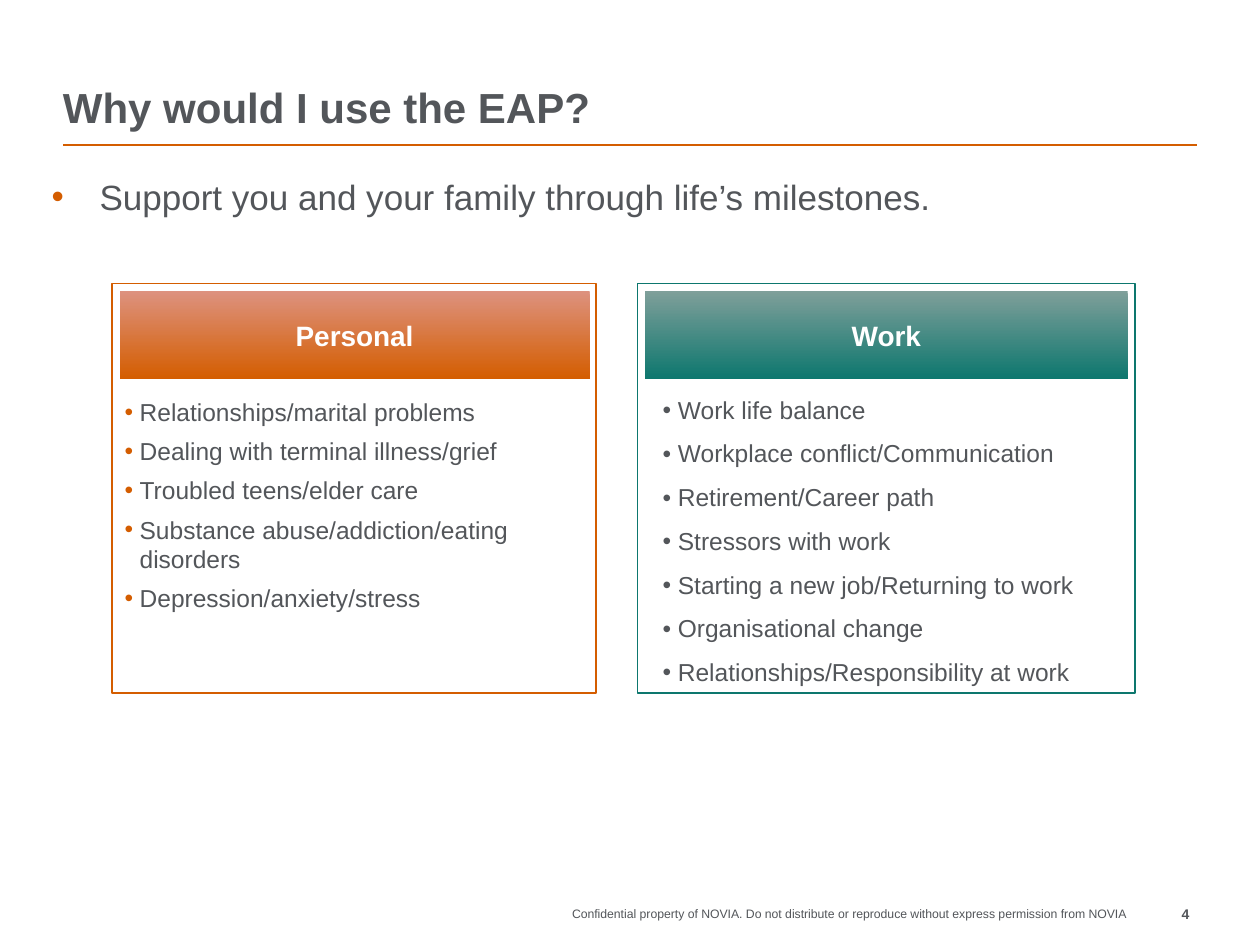
from lxml.etree import SubElement
from pptx import Presentation
from pptx.dml.color import RGBColor
from pptx.enum.shapes import MSO_CONNECTOR, MSO_SHAPE
from pptx.enum.text import MSO_ANCHOR, PP_ALIGN
from pptx.oxml.ns import qn
from pptx.util import Inches, Pt

FONT = "Arial"
GRAY, ORANGE, TEAL, WHITE = "53565A", "D45D00", "0D776E", "FFFFFF"
PANEL_TOP, PANEL_HEIGHT = 2.25, 3.25
HEADER_GAP, HEADER_HEIGHT = 0.06, 0.7

PERSONAL_ITEMS = [
    "Relationships/marital problems",
    "Dealing with terminal illness/grief",
    "Troubled teens/elder care",
    "Substance abuse/addiction/eating disorders",
    "Depression/anxiety/stress",
]
WORK_ITEMS = [
    "Work life balance",
    "Workplace conflict/Communication",
    "Retirement/Career path",
    "Stressors with work",
    "Starting a new job/Returning to work",
    "Organisational change",
    "Relationships/Responsibility at work",
]


def color(hex_value):
    """Turn a hex string into a colour."""
    return RGBColor.from_string(hex_value)


def set_frame(shape, margins=(0, 0, 0, 0), anchor=MSO_ANCHOR.TOP):
    """Set the wrapping, margins and anchor of a shape's text and return its frame."""
    frame = shape.text_frame
    frame.word_wrap = True
    frame.margin_left, frame.margin_top, frame.margin_right, frame.margin_bottom = map(Inches, margins)
    frame.vertical_anchor = anchor
    return frame


def write(paragraph, text, size, hex_value=GRAY, bold=False, align=PP_ALIGN.LEFT):
    """Add one styled run to a paragraph."""
    paragraph.alignment = align
    run = paragraph.add_run()
    run.text = text
    run.font.name = FONT
    run.font.size = Pt(size)
    run.font.bold = bold
    run.font.color.rgb = color(hex_value)


def add_bullet(paragraph, indent, hex_value):
    """Give a paragraph a coloured bullet with a hanging indent."""
    properties = paragraph._p.get_or_add_pPr()
    properties.set("marL", str(Inches(indent)))
    properties.set("indent", str(-Inches(indent)))
    bullet_color = SubElement(properties, qn("a:buClr"))
    SubElement(bullet_color, qn("a:srgbClr")).set("val", hex_value)
    SubElement(properties, qn("a:buFont")).set("typeface", FONT)
    SubElement(properties, qn("a:buChar")).set("char", "•")


def add_text(slide, box, text, size, bold=False, align=PP_ALIGN.LEFT,
             anchor=MSO_ANCHOR.TOP, bullet_indent=None):
    """Add a one-paragraph text box."""
    frame = set_frame(slide.shapes.add_textbox(*map(Inches, box)), anchor=anchor)
    paragraph = frame.paragraphs[0]
    if bullet_indent:
        add_bullet(paragraph, bullet_indent, ORANGE)
    write(paragraph, text, size, bold=bold, align=align)


def add_rule(slide, left, right, top):
    """Add the line under the title."""
    rule = slide.shapes.add_connector(
        MSO_CONNECTOR.STRAIGHT, Inches(left), Inches(top), Inches(right), Inches(top))
    rule.line.color.rgb = color(ORANGE)
    rule.line.width = Pt(1)
    SubElement(rule._element.spPr, qn("a:effectLst"))


def add_rectangle(slide, left, top, width, height):
    """Add a rectangle without a shadow."""
    shape = slide.shapes.add_shape(
        MSO_SHAPE.RECTANGLE, Inches(left), Inches(top), Inches(width), Inches(height))
    shape.shadow.inherit = False
    return shape


def add_panel(slide, left, width, items, line_color, bullet_color, side_margin,
              before=0, after=0, line_spacing=1.0):
    """Add an outlined panel with a bulleted list."""
    panel = add_rectangle(slide, left, PANEL_TOP, width, PANEL_HEIGHT)
    panel.fill.background()
    panel.line.color.rgb = color(line_color)
    panel.line.width = Pt(1)
    frame = set_frame(panel, (side_margin, 0.9, side_margin, 0.05))
    for index, item in enumerate(items):
        paragraph = frame.add_paragraph() if index else frame.paragraphs[0]
        add_bullet(paragraph, 0.12, bullet_color)
        paragraph.line_spacing = line_spacing
        paragraph.space_before = Pt(before if index else 0)
        paragraph.space_after = Pt(after)
        write(paragraph, item, 14)


def add_header(slide, left, width, text, top_color, bottom_color):
    """Add a gradient heading bar at the top of a panel."""
    header = add_rectangle(slide, left, PANEL_TOP + HEADER_GAP, width, HEADER_HEIGHT)
    header.line.fill.background()
    header.fill.gradient()
    header.fill.gradient_angle = 270
    for stop, position, hex_value in zip(
            header.fill.gradient_stops, (0, 1), (top_color, bottom_color)):
        stop.position = position
        stop.color.rgb = color(hex_value)
    frame = set_frame(header, (0.05,) * 4, MSO_ANCHOR.MIDDLE)
    write(frame.paragraphs[0], text, 16, WHITE, True, PP_ALIGN.CENTER)


def main():
    """Build the slide and save it."""
    presentation = Presentation()
    presentation.slide_width, presentation.slide_height = Inches(10), Inches(7.5)
    slide = presentation.slides.add_slide(presentation.slide_layouts[6])

    add_rule(slide, 0.5, 9.5, 1.15)
    add_text(slide, (3.33, 7.19, 5.61, 0.23),
             "Confidential property of NOVIA. Do not distribute or reproduce "
             "without express permission from NOVIA", 7, align=PP_ALIGN.RIGHT)
    add_text(slide, (8.94, 7.19, 0.5, 0.23), "4", 8, bold=True, align=PP_ALIGN.RIGHT)
    add_text(slide, (0.41, 1.23, 9.29, 0.5),
             "Support you and your family through life’s milestones.", 20,
             anchor=MSO_ANCHOR.BOTTOM, bullet_indent=0.38)
    add_text(slide, (0.5, 0.21, 9, 0.84), "Why would I use the EAP?", 24,
             bold=True, anchor=MSO_ANCHOR.BOTTOM)

    add_panel(slide, 0.89, 3.84, PERSONAL_ITEMS, ORANGE, ORANGE, 0.1, after=5.6)
    add_header(slide, 0.95, 3.73, "Personal", "DD927F", ORANGE)
    add_header(slide, 5.12, 3.83, "Work", "7F9F9A", TEAL)
    add_panel(slide, 5.06, 3.95, WORK_ITEMS, TEAL, GRAY, 0.2,
              before=6, after=3, line_spacing=0.95)

    presentation.save("out.pptx")


if __name__ == "__main__":
    main()
